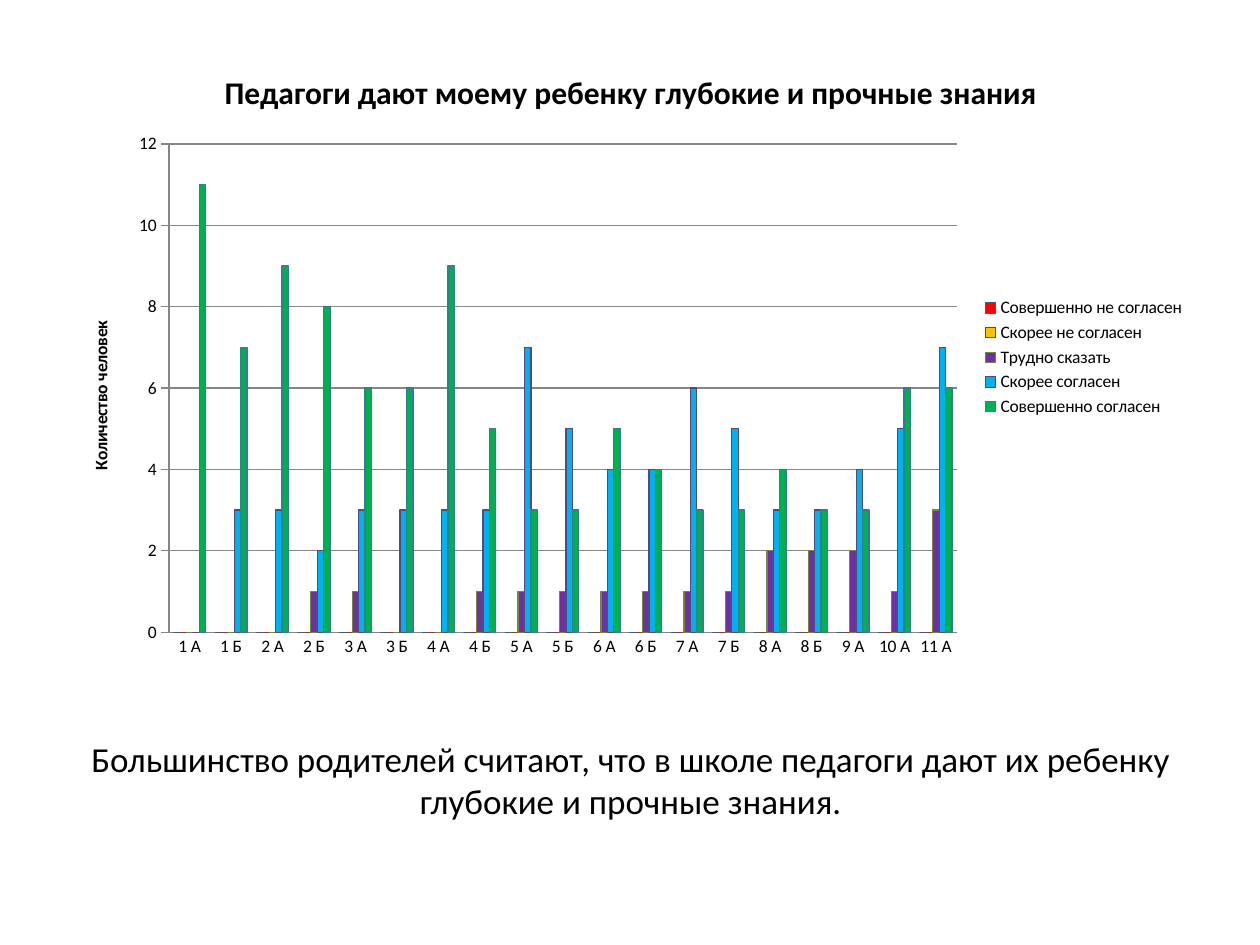
import pptx
import pptx.chart.data
import pptx.dml.color
import pptx.enum.chart
import pptx.enum.text
import pptx.util

Pt = pptx.util.Pt
FONT = "Calibri"
CLASSES = ["1 А", "1 Б", "2 А", "2 Б", "3 А", "3 Б", "4 А", "4 Б", "5 А", "5 Б",
           "6 А", "6 Б", "7 А", "7 Б", "8 А", "8 Б", "9 А", "10 А", "11 А"]
ANSWERS = [
    ("Совершенно не согласен", "FF0000", "385D8A", [0] * len(CLASSES)),
    ("Скорее не согласен", "FFC000", "8C3836", [0] * len(CLASSES)),
    ("Трудно сказать", "7030A0", "71893F",
     [0, 0, 0, 1, 1, 0, 0, 1, 1, 1, 1, 1, 1, 1, 2, 2, 2, 1, 3]),
    ("Скорее согласен", "00B0F0", "5C4776",
     [0, 3, 3, 2, 3, 3, 3, 3, 7, 5, 4, 4, 6, 5, 3, 3, 4, 5, 7]),
    ("Совершенно согласен", "00B050", "357D91",
     [11, 7, 9, 8, 6, 6, 9, 5, 3, 3, 5, 4, 3, 3, 4, 3, 3, 6, 6]),
]


def color(hex_value):
    """Turn a hex string into a colour."""
    return pptx.dml.color.RGBColor.from_string(hex_value)


def style_font(font, size, bold=False):
    """Set the black slide font at the given size."""
    font.name = FONT
    font.size = Pt(size)
    font.bold = bold
    font.color.rgb = color("000000")


def style_line(line, hex_value):
    """Set a thin solid line."""
    line.color.rgb = color(hex_value)
    line.width = Pt(0.75)


def set_heading(owner, text, size):
    """Give a chart or an axis a bold title."""
    frame = (owner.chart_title if hasattr(owner, "chart_title") else owner.axis_title).text_frame
    frame.text = text
    style_font(frame.paragraphs[0].font, size, True)


def add_survey_chart(slide, left, top, width, height):
    """Draw the answers of each class as clustered columns."""
    survey = pptx.chart.data.CategoryChartData(number_format="General")
    survey.categories = CLASSES
    for name, _, _, counts in ANSWERS:
        survey.add_series(name, counts)
    chart = slide.shapes.add_chart(
        pptx.enum.chart.XL_CHART_TYPE.COLUMN_CLUSTERED,
        Pt(left), Pt(top), Pt(width), Pt(height), survey).chart
    style_font(chart.font, 10)
    set_heading(chart, "Педагоги дают моему ребенку глубокие и прочные знания", 18)

    columns = chart.plots[0]
    columns.gap_width = 150
    columns.overlap = 0
    columns.vary_by_categories = False
    for series, (_, fill, outline, _) in zip(columns.series, ANSWERS):
        series.format.fill.solid()
        series.format.fill.fore_color.rgb = color(fill)
        style_line(series.format.line, outline)

    tick = pptx.enum.chart.XL_TICK_MARK
    classes, people = chart.category_axis, chart.value_axis
    classes.major_tick_mark = tick.NONE
    people.major_tick_mark = tick.OUTSIDE
    people.minimum_scale, people.maximum_scale, people.major_unit = 0, 12, 2
    people.has_major_gridlines = True
    for line in (classes.format.line, people.format.line, people.major_gridlines.format.line):
        style_line(line, "868686")
    set_heading(people, "Количество человек", 10)

    chart.has_legend = True
    chart.legend.position = pptx.enum.chart.XL_LEGEND_POSITION.RIGHT
    chart.legend.include_in_layout = False


def add_conclusion(slide, left, top, width, height):
    """Write the centred conclusion under the chart."""
    frame = slide.shapes.add_textbox(Pt(left), Pt(top), Pt(width), Pt(height)).text_frame
    frame.word_wrap = True
    frame.vertical_anchor = pptx.enum.text.MSO_ANCHOR.MIDDLE
    conclusion = frame.paragraphs[0]
    conclusion.text = ("Большинство родителей считают, что в школе педагоги дают "
                       "их ребенку глубокие и прочные знания.")
    conclusion.alignment = pptx.enum.text.PP_ALIGN.CENTER
    style_font(conclusion.font, 20)


def main():
    """Build and save the slide."""
    deck = pptx.Presentation()
    deck.slide_width, deck.slide_height = Pt(720), Pt(540)
    slide = deck.slides.add_slide(deck.slide_layouts[6])
    add_survey_chart(slide, 36.5, 26, 648, 356.5)
    add_conclusion(slide, 36.5, 400.5, 648, 90)
    deck.save("out.pptx")


if __name__ == "__main__":
    main()
